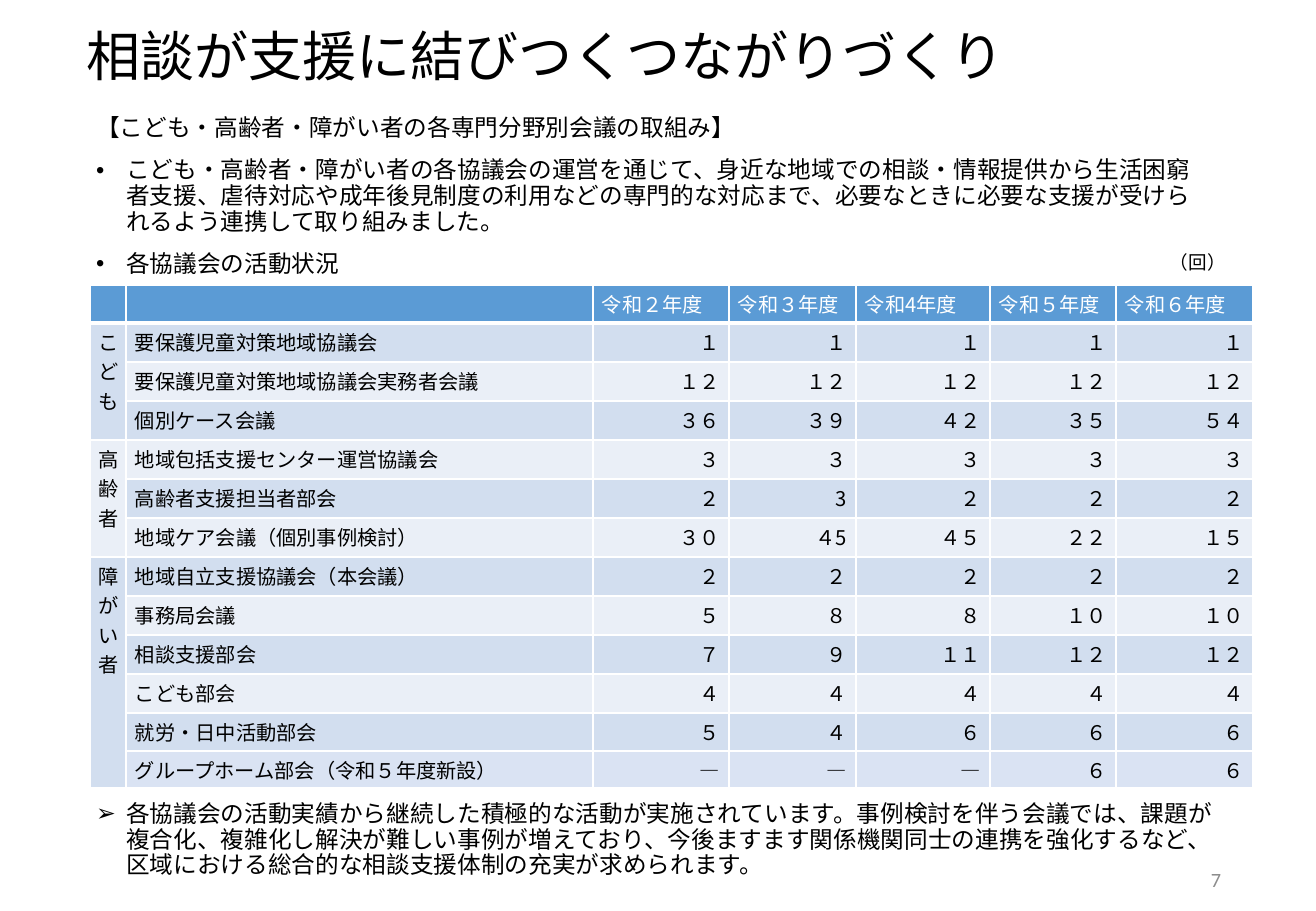
from lxml import etree
from pptx import Presentation
from pptx.dml.color import RGBColor
from pptx.enum.text import MSO_ANCHOR, MSO_AUTO_SIZE, PP_ALIGN
from pptx.oxml.ns import qn
from pptx.util import Pt

LEFT, RIGHT = PP_ALIGN.LEFT, PP_ALIGN.RIGHT
TOP, MIDDLE = MSO_ANCHOR.TOP, MSO_ANCHOR.MIDDLE
NO_FIT = MSO_AUTO_SIZE.NONE
JP, LATIN = "Noto Sans CJK JP", "Calibri"
BLACK, WHITE, GREY = "000000", "FFFFFF", "8C8C8C"
HEADER, BAND_DARK, BAND_LIGHT, NEW_ROW = "5B9BD5", "D2DEEF", "EAEFF7", "DAE3F3"

YEARS = ["令和２年度", "令和３年度", "令和4年度", "令和５年度", "令和６年度"]
GROUPS = [
    ("こども", [
        ("要保護児童対策地域協議会", "１ １ １ １ １"),
        ("要保護児童対策地域協議会実務者会議", "１２ １２ １２ １２ １２"),
        ("個別ケース会議", "３６ ３９ ４２ ３５ ５４"),
    ]),
    ("高齢者", [
        ("地域包括支援センター運営協議会", "３ ３ ３ ３ ３"),
        ("高齢者支援担当者部会", "２ 3 ２ ２ ２"),
        ("地域ケア会議（個別事例検討）", "３０ ４5 ４５ ２２ １５"),
    ]),
    ("障がい者", [
        ("地域自立支援協議会（本会議）", "２ ２ ２ ２ ２"),
        ("事務局会議", "５ ８ ８ １０ １０"),
        ("相談支援部会", "７ ９ １１ １２ １２"),
        ("こども部会", "４ ４ ４ ４ ４"),
        ("就労・日中活動部会", "５ ４ ６ ６ ６"),
        ("グループホーム部会（令和５年度新設）", "― ― ― ６ ６"),
    ]),
]
BODY = [
    ("【こども・高齢者・障がい者の各専門分野別会議の取組み】", None, 0),
    ("こども・高齢者・障がい者の各協議会の運営を通じて、身近な地域での相談・情報提供から"
     "生活困窮者支援、虐待対応や成年後見制度の利用などの専門的な対応まで、"
     "必要なときに必要な支援が受けられるよう連携して取り組みました。", "•", 10),
    ("各協議会の活動状況", "•", 10),
    ("各協議会の活動実績から継続した積極的な活動が実施されています。"
     "事例検討を伴う会議では、課題が複合化、複雑化し解決が難しい事例が増えており、"
     "今後ますます関係機関同士の連携を強化するなど、"
     "区域における総合的な相談支援体制の充実が求められます。", "➢", 311),
]
COLUMNS = [36, 467, 136, 127, 134, 126, 137]
ROWS = [38] + [39] * 10 + [38, 37]


def px(n):
    return round(n * 914400 / 121.5)


def color(value):
    return RGBColor.from_string(value)


class Deck:
    """Holds the text style and the current slide and adds elements to it."""

    def __init__(self, width, height):
        self.prs = Presentation()
        self.prs.slide_width, self.prs.slide_height = px(width), px(height)
        self.s = self.prs.slides.add_slide(self.prs.slide_layouts[1])
        self.spacing = 0.9

    def run(self, p, text, size, fill=BLACK, font=JP):
        r = p.add_run()
        r.text = text
        r.font.size, r.font.name = Pt(size), font
        r.font.color.rgb = color(fill)
        etree.SubElement(r.font._element, qn("a:ea"), typeface=font)

    def frame(self, sp, box, anchor):
        sp.left, sp.top, sp.width, sp.height = map(px, box)
        tf = sp.text_frame
        tf.word_wrap, tf.auto_size, tf.vertical_anchor = True, NO_FIT, anchor
        return tf

    def title(self, text, box):
        p = self.frame(self.s.shapes.title, box, MIDDLE).paragraphs[0]
        p.alignment, p.line_spacing = LEFT, self.spacing
        self.run(p, text, 32)

    def body(self, items, box):
        tf = self.frame(self.s.placeholders[1], box, TOP)
        for i, (text, bullet, before) in enumerate(items):
            p = tf.add_paragraph() if i else tf.paragraphs[0]
            pPr = p._p.get_or_add_pPr()
            indent = px(30) if bullet else 0
            pPr.set("marL", str(indent))
            pPr.set("indent", str(-indent))
            if bullet:
                etree.SubElement(pPr, qn("a:buFont"), typeface="Arial")
                etree.SubElement(pPr, qn("a:buChar"), char=bullet)
            else:
                etree.SubElement(pPr, qn("a:buNone"))
            p.line_spacing, p.space_before = self.spacing, Pt(before)
            self.run(p, text, 14)

    def label(self, text, box, size, fill=BLACK, font=JP, align=LEFT, anchor=TOP):
        sp = self.s.shapes.add_textbox(0, 0, 0, 0)
        p = self.frame(sp, box, anchor).paragraphs[0]
        p.alignment = align
        self.run(p, text, size, fill, font)

    def table(self, left, top, columns, rows):
        shape = self.s.shapes.add_table(
            len(rows), len(columns), px(left), px(top), px(sum(columns)), px(sum(rows)))
        for column, width in zip(shape.table.columns, columns):
            column.width = px(width)
        for row, height in zip(shape.table.rows, rows):
            row.height = px(height)
        return shape.table

    def cell(self, cell, text, fill, ink=BLACK, align=LEFT, top=1, bottom=1):
        cell.margin_left = cell.margin_right = px(9)
        cell.margin_top = cell.margin_bottom = px(4)
        cell.fill.solid()
        cell.fill.fore_color.rgb = color(fill)
        tcPr = cell._tc.get_or_add_tcPr()
        for i, (side, width) in enumerate(zip("LRTB", (1, 1, top, bottom))):
            ln = etree.Element(qn("a:ln" + side), w=str(Pt(width)))
            solid = etree.SubElement(ln, qn("a:solidFill"))
            etree.SubElement(solid, qn("a:srgbClr"), val=WHITE)
            tcPr.insert(i, ln)
        p = cell.text_frame.paragraphs[0]
        p.alignment = align
        if text:
            self.run(p, text, 12, ink)
        else:
            p._p.get_or_add_endParaRPr().set("sz", "1200")


def fill_meetings(deck, table):
    for c, text in enumerate(["", ""] + YEARS):
        deck.cell(table.cell(0, c), text, HEADER, WHITE, bottom=3)
    row = 1
    for group, meetings in GROUPS:
        first, last = row, row + len(meetings) - 1
        group_fill = BAND_DARK if first % 2 else BAND_LIGHT
        for name, counts in meetings:
            band = BAND_DARK if row % 2 else BAND_LIGHT
            fill = NEW_ROW if row == len(ROWS) - 1 else band
            top = 3 if row == 1 else 1
            deck.cell(table.cell(row, 0), group if row == first else "", group_fill, top=top)
            deck.cell(table.cell(row, 1), name, fill, top=top)
            for c, count in enumerate(counts.split(), 2):
                deck.cell(table.cell(row, c), count, fill, align=RIGHT, top=top)
            row += 1
        head = table.cell(first, 0)
        head.merge(table.cell(last, 0))
        head._tc.get_or_add_tcPr().set("vert", "wordArtVertRtl")


def main():
    deck = Deck(1316, 911)
    deck.title("相談が支援に結びつくつながりづくり", (74, 24, 1085, 69))
    deck.body(BODY, (84, 110, 1142, 756))
    deck.label("7", (960, 861, 273, 37), 12, GREY, LATIN, RIGHT, MIDDLE)
    fill_meetings(deck, deck.table(90, 285, COLUMNS, ROWS))
    deck.label("（回）", (1158, 245, 94, 39), 11)
    deck.prs.save("out.pptx")


if __name__ == "__main__":
    main()
